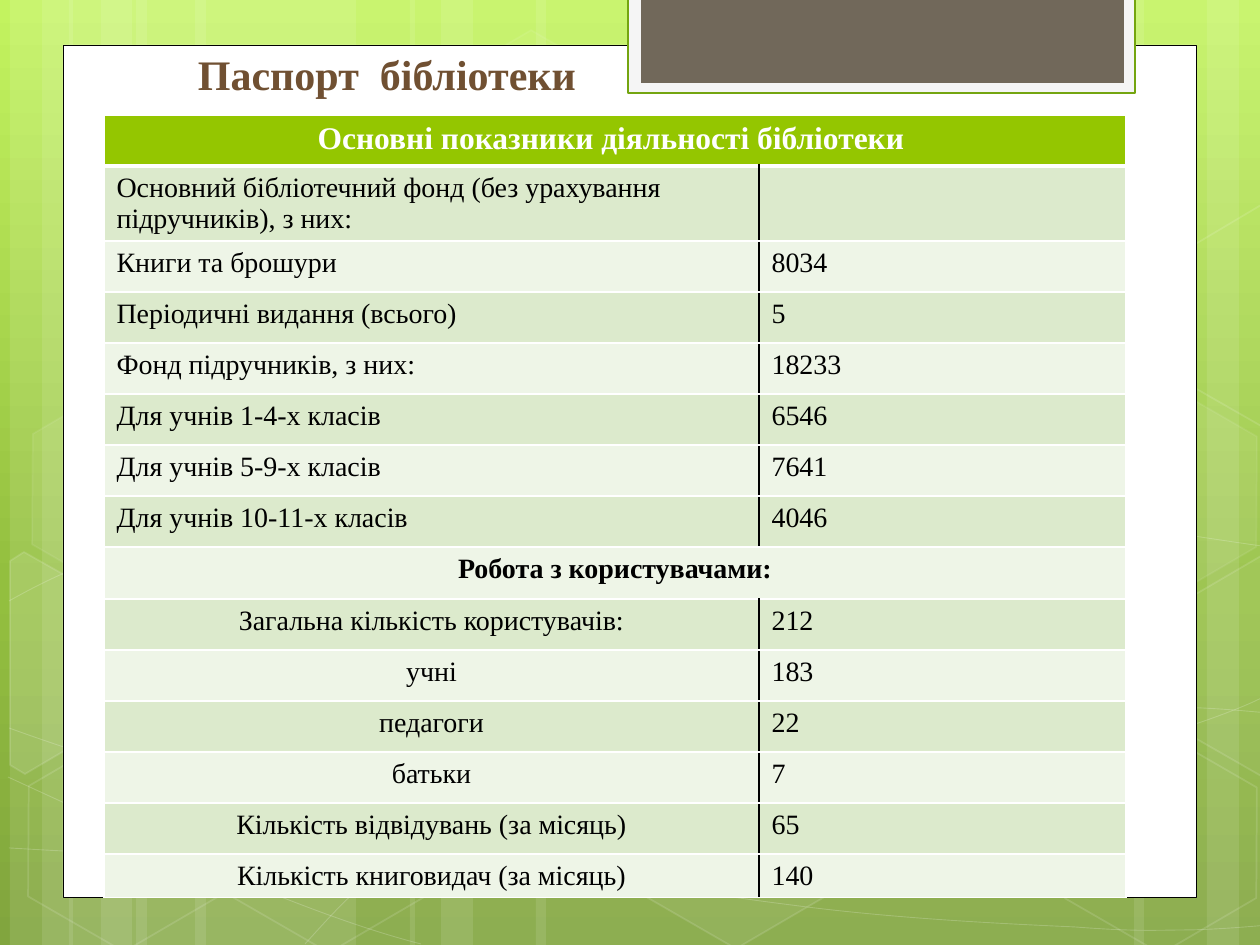
from copy import deepcopy
from pptx import Presentation
from pptx.dml.color import RGBColor
from pptx.enum.shapes import MSO_SHAPE as Kind
from pptx.enum.text import MSO_ANCHOR as Anchor, PP_ALIGN as Align
from pptx.oxml import parse_xml
from pptx.oxml.ns import nsdecls, qn
from pptx.util import Pt

PX = 914400 / 126
WIDE, HIGH = 1260, 945
WHITE, BLACK = "FFFFFF", "000000"
FONT = "Times New Roman"

STRIPES = [(136, 220), (10, 63), (42, 105), (195, 220), (69, 63), (101, 105),
           (924, 220), (1207, 63), (1134, 105), (536, 388), (410, 63), (441, 105)]

# Start point, then parts: six numbers for a Bezier segment, two for a straight one
CURVES = [
    [(9, 848), (77, 852, 145, 856, 239, 854), (334, 853, 451, 851, 577, 838),
     (703, 825, 882, 801, 998, 777), (1113, 753, 1231, 716, 1269, 694)],
    [(9, 601), (45, 581, 82, 562, 152, 543), (224, 524, 326, 496, 437, 488),
     (549, 479, 685, 478, 824, 488), (963, 498, 1193, 537, 1269, 547)],
    [(8, 777), (160, 847, 311, 916, 421, 944)],
    [(9, 728), (48, 742, 88, 756, 161, 776), (234, 795, 344, 827, 450, 848),
     (554, 869, 687, 892, 791, 905), (896, 919, 1008, 924, 1075, 927),
     (1140, 932, 1158, 930, 1191, 930), (1223, 929, 1246, 927, 1269, 925)],
    [(305, 944), (328, 919, 350, 893, 381, 871), (411, 848, 454, 823, 489, 805),
     (524, 788, 546, 780, 592, 767), (638, 755, 722, 737, 766, 728),
     (811, 719, 818, 719, 857, 717), (896, 713, 958, 709, 1000, 708),
     (1045, 707, 1116, 708, 1116, 708), (1201, 708),
     (1223, 709, 1245, 711, 1256, 712), (1267, 713, 1264, 712, 1268, 713)],
]

# Left, top, fill opacity, line opacity
HEXES = [(421, 45, 4, 8), (626, 742, 6, 12), (14, 745, None, 12),
         (18, 393, 7, 8), (219, 746, None, 12), (949, 571, 10, 12),
         (1051, 747, None, 12), (1051, 396, 7, 8)]

# Hexagons cut by the slide edge: fill opacity, corners
CUTS = [
    (10, [(10, 561), (24, 552), (121, 607), (120, 718), (25, 774), (10, 765)]),
    (4, [(1167, 611), (1261, 556), (1271, 562), (1271, 772), (1263, 777), (1167, 722)]),
    (None, [(1167, 261), (1261, 205), (1273, 212), (1271, 422), (1263, 427), (1167, 372)]),
]

# Label and value; None for a value marks a heading across both columns
ROWS = [
    ("Основні показники діяльності бібліотеки ", None),
    ("Основний бібліотечний фонд (без урахування підручників), з них:", ""),
    ("Книги та брошури", "8034"),
    ("Періодичні видання (всього)", "5"),
    ("Фонд підручників, з них:", "18233"),
    ("Для учнів 1-4-х класів", "6546"),
    ("Для учнів 5-9-х класів", "7641"),
    ("Для учнів 10-11-х класів", "4046"),
    ("Робота з користувачами:", None),
    ("Загальна кількість користувачів:", "212"),
    ("учні", "183"),
    ("педагоги", "22"),
    ("батьки", "7"),
    ("Кількість відвідувань (за місяць)", "65"),
    ("Кількість книговидач (за місяць)", "140"),
]
USERS = 8  # row where the users section starts


def px(*nums):
    return [round(n * PX) for n in nums]


def rgb(code):
    return RGBColor.from_string(code)


def tint(fill, owner, code, alpha):
    """Fill with a colour; alpha is the opacity in percent."""
    if code is None or alpha is None:
        fill.background()
        return
    fill.solid()
    fill.fore_color.rgb = rgb(code)
    if alpha < 100:
        clr = owner().find(qn("a:solidFill")).find(qn("a:srgbClr"))
        clr.append(parse_xml(f'<a:alpha {nsdecls("a")} val="{alpha * 1000}"/>'))


def paint(shape, fill=None, alpha=100, line=None, width=1, clear=100):
    prop = shape._element.spPr
    shape.shadow.inherit = False
    tint(shape.fill, lambda: prop, fill, alpha)
    tint(shape.line.fill, lambda: prop.find(qn("a:ln")), line, clear)
    if line:
        shape.line.width = Pt(width)


def block(slide, box, kind=Kind.RECTANGLE, **look):
    shape = slide.shapes.add_shape(kind, *px(*box))
    paint(shape, **look)
    return shape


def trace(slide, dots, close=False, **look):
    pen = slide.shapes.build_freeform(*dots[0], scale=PX)
    pen.add_line_segments(dots[1:], close=close)
    shape = pen.convert_to_shape()
    paint(shape, **look)
    return shape


def bend(slide, start, *parts, **look):
    """Trace all points, then join each three of a Bezier part into one segment."""
    dots = [start] + [part[i:i + 2] for part in parts for i in range(0, len(part), 2)]
    shape = trace(slide, dots, **look)
    legs = iter(list(shape._element.iter(qn("a:lnTo"))))
    for part in parts:
        first = next(legs)
        if len(part) == 6:
            first.tag = qn("a:cubicBezTo")
            for leg in (next(legs), next(legs)):
                first.append(leg[0])
                leg.getparent().remove(leg)


def write(frame, text, size=16, color=BLACK, bold=False, align=Align.LEFT):
    par = frame.paragraphs[0]
    par.alignment = align
    run = par.add_run()
    run.text = text
    font = run.font
    font.name, font.size, font.bold = FONT, Pt(size), bold
    font.color.rgb = rgb(color)


def edge(cell, **sides):
    """Cell borders: L, R, T, B as (colour, points)."""
    prop = cell._tc.get_or_add_tcPr()
    for i, side in enumerate("LRTB"):
        color, width = sides.get(side, (WHITE, 1))
        prop.insert(i, parse_xml(
            f'<a:ln{side} {nsdecls("a")} w="{Pt(width)}"><a:solidFill>'
            f'<a:srgbClr val="{color}"/></a:solidFill></a:ln{side}>'))


def backdrop(slide):
    fill = slide.background.fill
    fill.gradient()
    fill.gradient_angle = 270
    stops = slide._element.find(".//" + qn("a:gsLst"))
    stops.append(deepcopy(stops[-1]))
    shades = [(0, "C3F35F"), (0.62, "93BF3F"), (1, "81A53E")]
    for stop, (place, code) in zip(fill.gradient_stops, shades):
        stop.position = place
        stop.color.rgb = rgb(code)
    for left, width in STRIPES:
        block(slide, (left, 0, width, HIGH), fill=WHITE, alpha=10)
    for curve in CURVES:
        bend(slide, *curve, line=WHITE, width=0.5, clear=20)
    for left, top, alpha, clear in HEXES:
        cell = block(slide, (left, top, 220, 192), Kind.HEXAGON,
                     fill=WHITE, alpha=alpha, line=WHITE, clear=clear)
        cell.adjustments[0] = 0.285
        cell.rotation = 30
    for alpha, dots in CUTS:
        trace(slide, dots, close=True, fill=WHITE, alpha=alpha, line=WHITE, clear=12)


def title(slide, text):
    frame = slide.shapes.add_textbox(*px(144, 36, 968, 69)).text_frame
    frame.word_wrap = True
    frame.vertical_anchor = Anchor.BOTTOM
    frame.margin_left = px(54)[0]
    write(frame, text, size=24, color="705032", bold=True)


def figures(slide):
    highs = [51, 74] + [51] * 6 + [52] + [51] * 5 + [44]
    table = slide.shapes.add_table(len(ROWS), 2, *px(104, 115, 1022, sum(highs))).table
    for col, width in zip(table.columns, px(655, 367)):
        col.width = width
    for i, (label, value) in enumerate(ROWS):
        table.rows[i].height = px(highs[i])[0]
        left, right = table.cell(i, 0), table.cell(i, 1)
        head = value is None
        for cell in (left, right):
            cell.fill.solid()
            cell.fill.fore_color.rgb = rgb("94C600" if i == 0 else ("EEF5E7", "DCEACC")[i % 2])
        thick = {0: {"B": (WHITE, 3)}, 1: {"T": (WHITE, 3)}}.get(i, {})
        rule = (WHITE if head else BLACK, 1)
        edge(left, R=rule, **thick)
        edge(right, L=rule, **thick)
        if head:
            left.merge(right)
        write(left.text_frame, label, bold=head,
              size=18 if i == 0 else 16, color=WHITE if i == 0 else BLACK,
              align=Align.CENTER if head or i > USERS else Align.LEFT)
        if value:
            write(right.text_frame, value)


def main():
    deck = Presentation()
    deck.slide_width, deck.slide_height = px(WIDE, HIGH)
    slide = deck.slides.add_slide(deck.slide_layouts[6])
    backdrop(slide)
    block(slide, (63, 45, 1134, 853), fill=WHITE, line=BLACK, width=0.5)
    block(slide, (628, -3, 507, 96), fill="F5F5F5", line="74A510", width=1.25)
    block(slide, (641, -3, 483, 86), fill="71685A")
    figures(slide)
    title(slide, "Паспорт  бібліотеки")
    deck.save("out.pptx")


if __name__ == "__main__":
    main()
